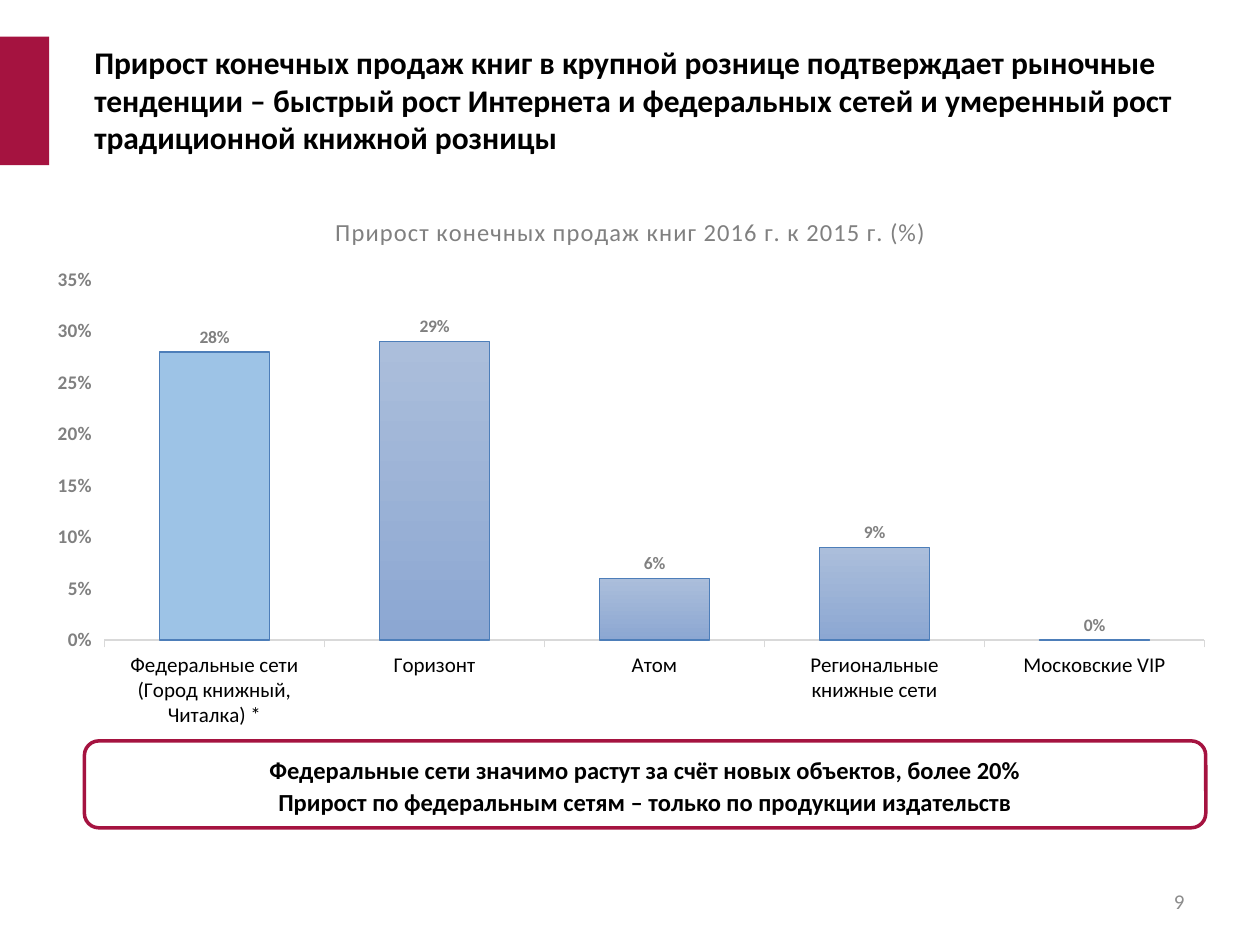
"""Build the slide on growth of book sales in large retail chains."""
from lxml.etree import SubElement
from pptx import Presentation
from pptx.chart.data import CategoryChartData
from pptx.dml.color import RGBColor
from pptx.enum.chart import XL_CHART_TYPE as ChartType, XL_LABEL_POSITION as LabelPosition
from pptx.enum.chart import XL_TICK_LABEL_POSITION as TickLabels, XL_TICK_MARK as TickMark
from pptx.enum.shapes import MSO_SHAPE as Shape
from pptx.enum.text import MSO_ANCHOR as Anchor, PP_ALIGN as Align
from pptx.oxml.ns import qn
from pptx.util import Inches, Pt

ACCENT, BLACK, GRAY = "A51340", "000000", "808080"


def color(value):
    return RGBColor.from_string(value)


def style(font, size, value, bold=False):
    font.name = "Calibri"
    font.size = Pt(size)
    font.bold = bold
    font.color.rgb = color(value)


deck = Presentation()
deck.slide_width, deck.slide_height = Inches(10), Inches(7.5)
page = deck.slides.add_slide(deck.slide_layouts[6])

marker = page.shapes.add_shape(Shape.RECTANGLE, 0, Inches(0.29), Inches(0.39), Inches(1.02))
marker.shadow.inherit = False
marker.fill.solid()
marker.fill.fore_color.rgb = color(ACCENT)
marker.line.fill.background()

heading = page.shapes.add_textbox(Inches(0.65), Inches(0.29), Inches(9), Inches(1.25))
heading.text_frame.word_wrap = True
heading.text_frame.text = (
    "Прирост конечных продаж книг в крупной рознице подтверждает рыночные "
    "тенденции – быстрый рост Интернета и федеральных сетей и умеренный рост "
    "традиционной книжной розницы"
)
style(heading.text_frame.paragraphs[0].runs[0].font, 18, BLACK, True)

growth = CategoryChartData(number_format="0%")
growth.categories = [
    "Федеральные сети (Город книжный, Читалка) *",
    "Горизонт",
    "Атом",
    "Региональные книжные сети",
    "Московские VIP",
]
growth.add_series("Прирост", [0.28, 0.29, 0.06, 0.09, 0])
chart = page.shapes.add_chart(
    ChartType.COLUMN_CLUSTERED, Inches(0.26), Inches(1.53), Inches(9.49), Inches(4.33), growth
).chart
style(chart.font, 10, BLACK)
chart.has_legend = False
chart.has_title = True
chart.chart_title.include_in_layout = False
chart.chart_title.text_frame.text = "Прирост конечных продаж книг 2016 г. к 2015 г. (%)"
title_font = chart.chart_title.text_frame.paragraphs[0].runs[0].font
style(title_font, 14, GRAY)
title_font._element.set("spc", "50")

plot_area = chart._chartSpace.chart.plotArea
for old_layout in plot_area.findall(qn("c:layout")):
    plot_area.remove(old_layout)
layout = SubElement(plot_area, qn("c:layout"))
plot_area.insert(0, layout)
manual = SubElement(layout, qn("c:manualLayout"))
for tag, value in [
    ("layoutTarget", "inner"), ("xMode", "edge"), ("yMode", "edge"),
    ("x", "0.06"), ("y", "0.16"), ("w", "0.92"), ("h", "0.66"),
]:
    SubElement(manual, qn(f"c:{tag}")).set("val", value)

category_axis = chart.category_axis
category_axis.tick_label_position = TickLabels.LOW
category_axis.major_tick_mark = TickMark.OUTSIDE
category_axis.format.line.color.rgb = color("D9D9D9")
category_axis.format.line.width = Pt(0.75)
style(category_axis.tick_labels.font, 12, BLACK)

value_axis = chart.value_axis
value_axis.minimum_scale, value_axis.maximum_scale, value_axis.major_unit = 0, 0.35, 0.05
value_axis.has_major_gridlines = False
value_axis.format.line.fill.background()
value_axis.tick_labels.number_format = "0%"
value_axis.tick_labels.number_format_is_linked = False
style(value_axis.tick_labels.font, 11, GRAY, True)

plot = chart.plots[0]
plot.vary_by_categories = False
plot.gap_width, plot.overlap = 100, -24
plot.has_data_labels = True
labels = plot.data_labels
labels.show_value = True
labels.number_format, labels.number_format_is_linked = "0%", False
labels.position = LabelPosition.OUTSIDE_END
style(labels.font, 10, GRAY, True)

series = plot.series[0]
series.format.fill.gradient()
series.format.fill.gradient_angle = 270
for stop, value in zip(series.format.fill.gradient_stops, ["ABBEDB", "8CA7D2"]):
    stop.color.rgb = color(value)
federal = series.points[0]
federal.format.fill.solid()
federal.format.fill.fore_color.rgb = color("9DC3E6")
for bar in (series, federal):
    bar.format.line.color.rgb = color("4D7EB9")
    bar.format.line.width = Pt(0.75)

callout = page.shapes.add_shape(
    Shape.ROUNDED_RECTANGLE, Inches(0.67), Inches(5.88), Inches(8.9), Inches(0.69)
)
callout.shadow.inherit = False
callout.fill.background()
callout.line.color.rgb = color(ACCENT)
callout.line.width = Pt(2)
callout.text_frame.word_wrap = True
callout.text_frame.vertical_anchor = Anchor.MIDDLE
callout.text_frame.text = (
    "Федеральные сети значимо растут за счёт новых объектов, более 20%\n"
    "Прирост по федеральным сетям – только по продукции издательств"
)
for para in callout.text_frame.paragraphs:
    para.alignment = Align.CENTER
    para.line_spacing = 1.1
    style(para.runs[0].font, 14, BLACK, True)

number = page.shapes.add_textbox(Inches(7.17), Inches(6.95), Inches(2.33), Inches(0.4))
number.text_frame.word_wrap = True
number.text_frame.vertical_anchor = Anchor.MIDDLE
number.text_frame.text = "9"
number.text_frame.paragraphs[0].alignment = Align.RIGHT
style(number.text_frame.paragraphs[0].runs[0].font, 12, "8C8C8C")

deck.save("out.pptx")
